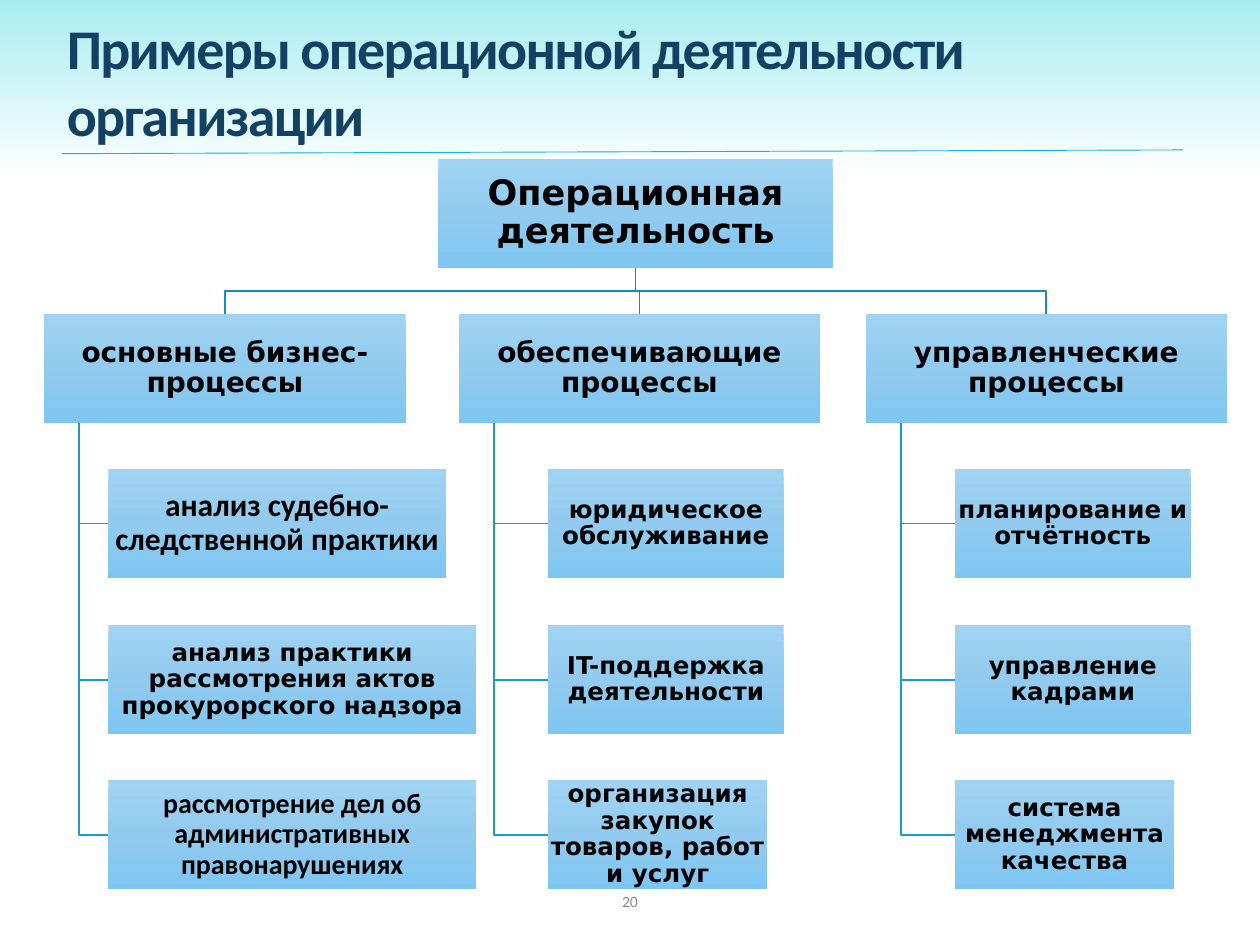
from copy import deepcopy
from dataclasses import dataclass

from pptx import Presentation
from pptx.dml.color import RGBColor
from pptx.enum.shapes import MSO_CONNECTOR, MSO_SHAPE
from pptx.enum.text import MSO_ANCHOR, MSO_AUTO_SIZE, PP_ALIGN
from pptx.oxml.ns import qn
from pptx.util import Inches, Pt

RECTANGLE = MSO_SHAPE.RECTANGLE
STRAIGHT = MSO_CONNECTOR.STRAIGHT
MIDDLE = MSO_ANCHOR.MIDDLE
LEFT, CENTER = PP_ALIGN.LEFT, PP_ALIGN.CENTER


@dataclass(frozen=True)
class Theme:
    background: tuple = ((0, "FFFFFF"), (0.81, "FFFFFF"), (1, "A8ECEF"))
    box: tuple = ((0, "A0D3F2"), (0.5, "92CBEF"), (1, "7EC6F1"))
    title: str = "134163"
    text: str = "000000"
    number: str = "8C8C8C"
    rule: str = "1CADE4"
    trunk: str = "168BB7"
    branch: str = "199DCF"
    title_font: str = "Calibri"
    box_font: str = "DejaVu Sans"
    title_size: int = 32
    root_size: int = 20
    header_size: int = 16
    item_size: int = 14
    number_size: int = 9


theme = Theme()


def set_gradient(fill, element, stops, angle):
    """Fill with three colour stops; angle runs counter-clockwise."""
    fill.gradient()
    fill.gradient_angle = angle
    stop_list = element.find(".//" + qn("a:gsLst"))
    stop_list.append(deepcopy(stop_list[0]))
    for stop, (position, color) in zip(fill.gradient_stops, stops):
        stop.position = position
        stop.color.rgb = RGBColor.from_string(color)


def add_box(left, top, width, text, size, font=theme.box_font):
    shape = slide.shapes.add_shape(
        RECTANGLE, Inches(left), Inches(top), Inches(width), Inches(BOX_HEIGHT))
    shape.shadow.inherit = False
    shape.line.fill.background()
    set_gradient(shape.fill, shape._element, theme.box, 270)
    frame = shape.text_frame
    frame.word_wrap = True
    frame.vertical_anchor = MIDDLE
    frame.margin_left = frame.margin_right = Inches(0.01)
    frame.margin_top = frame.margin_bottom = Inches(0.01)
    paragraph = frame.paragraphs[0]
    paragraph.text = text
    paragraph.alignment = CENTER
    paragraph.line_spacing = 0.9
    paragraph.font.name = font
    paragraph.font.size = Pt(size)
    paragraph.font.bold = True
    paragraph.font.color.rgb = RGBColor.from_string(theme.text)


presentation = Presentation()
presentation.slide_width, presentation.slide_height = Inches(10), Inches(7.5)
slide = presentation.slides.add_slide(presentation.slide_layouts[5])
set_gradient(slide.background.fill, slide._element, theme.background, 90)

# Title
title = slide.shapes.title
title.left, title.top = Inches(0.43), Inches(0.05)
title.width, title.height = Inches(9.38), Inches(1.18)
title.text_frame.word_wrap = True
title.text_frame.auto_size = MSO_AUTO_SIZE.NONE
title.text_frame.vertical_anchor = MIDDLE
paragraph = title.text_frame.paragraphs[0]
paragraph.text = "Примеры операционной деятельности организации"
paragraph.alignment = LEFT
paragraph.font.name = theme.title_font
paragraph.font.size = Pt(theme.title_size)
paragraph.font.bold = True
paragraph.font.color.rgb = RGBColor.from_string(theme.title)
paragraph.runs[0].font._element.set("spc", "-100")

# Chart layout
BOX_HEIGHT = 0.87
ROOT_LEFT, ROOT_TOP, ROOT_WIDTH = 3.48, 1.26, 3.13
HEADER_TOP, HEADER_WIDTH = 2.49, 2.87
ITEM_TOPS = (3.72, 4.96, 6.19)
SPINE_INDENT = 0.28
root_center = ROOT_LEFT + ROOT_WIDTH / 2
root_bottom = ROOT_TOP + BOX_HEIGHT
bus_top = (root_bottom + HEADER_TOP) / 2
header_bottom = HEADER_TOP + BOX_HEIGHT

# Column: left edge, left edge of items, header, items (text, width, size, font)
columns = [
    (0.35, 0.86, "основные бизнес-процессы", [
        ("анализ судебно-следственной практики", 2.68, 18, theme.title_font),
        ("анализ практики рассмотрения актов прокурорского надзора",
         2.92, theme.item_size, theme.box_font),
        ("рассмотрение дел об административных правонарушениях",
         2.92, 16, theme.title_font),
    ]),
    (3.64, 4.35, "обеспечивающие процессы", [
        ("юридическое обслуживание", 1.87, theme.item_size, theme.box_font),
        ("IT-поддержка деятельности", 1.87, theme.item_size, theme.box_font),
        ("организация закупок товаров, работ и услуг",
         1.74, theme.item_size, theme.box_font),
    ]),
    (6.87, 7.58, "управленческие процессы", [
        ("планирование и отчётность", 1.87, theme.item_size, theme.box_font),
        ("управление кадрами", 1.87, theme.item_size, theme.box_font),
        ("система менеджмента качества", 1.74, theme.item_size, theme.box_font),
    ]),
]

# Elbow lines
elbows = []
for left, item_left, header, items in columns:
    center = left + HEADER_WIDTH / 2
    elbows.append((theme.trunk, [(root_center, root_bottom), (root_center, bus_top),
                                 (center, bus_top), (center, HEADER_TOP)]))
    spine = left + SPINE_INDENT
    for top in ITEM_TOPS:
        middle = top + BOX_HEIGHT / 2
        elbows.append((theme.branch, [(spine, header_bottom), (spine, middle),
                                      (item_left, middle)]))

for color, points in elbows:
    start, *rest = [(Inches(x), Inches(y)) for x, y in points]
    builder = slide.shapes.build_freeform(*start)
    builder.add_line_segments(rest, close=False)
    elbow = builder.convert_to_shape()
    elbow.shadow.inherit = False
    elbow.fill.background()
    elbow.line.color.rgb = RGBColor.from_string(color)
    elbow.line.width = Pt(1)

# Boxes
add_box(ROOT_LEFT, ROOT_TOP, ROOT_WIDTH, "Операционная деятельность", theme.root_size)
for left, item_left, header, items in columns:
    add_box(left, HEADER_TOP, HEADER_WIDTH, header, theme.header_size)
    for top, (text, width, size, font) in zip(ITEM_TOPS, items):
        add_box(item_left, top, width, text, size, font)

# Slide number
number = slide.shapes.add_textbox(Inches(3.31), Inches(6.95), Inches(3.38), Inches(0.4))
number.text_frame.word_wrap = True
number.text_frame.vertical_anchor = MIDDLE
paragraph = number.text_frame.paragraphs[0]
paragraph.text = "20"
paragraph.alignment = CENTER
paragraph.font.name = theme.title_font
paragraph.font.size = Pt(theme.number_size)
paragraph.font.color.rgb = RGBColor.from_string(theme.number)

# Rule under the title
rule = slide.shapes.add_connector(
    STRAIGHT, Inches(0.49), Inches(1.22), Inches(9.39), Inches(1.19))
rule.line.color.rgb = RGBColor.from_string(theme.rule)
rule.line.width = Pt(0.5)
rule._element.spPr.append(rule._element.makeelement(qn("a:effectLst"), {}))

presentation.save("out.pptx")
